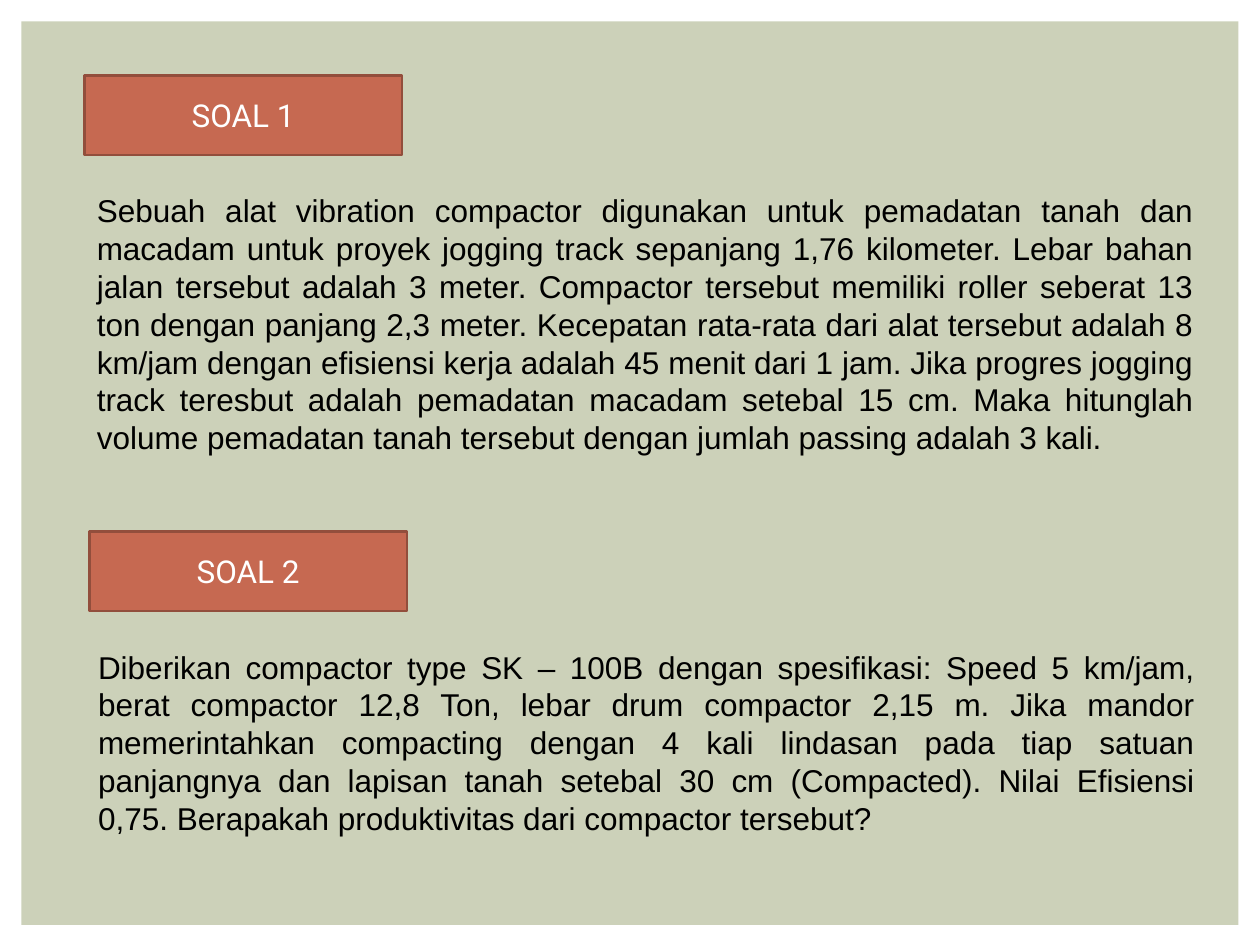
"""Build a slide with two compactor exercises, each under a label box."""
from dataclasses import dataclass

from pptx import Presentation
from pptx.dml.color import RGBColor
from pptx.enum import shapes, text
from pptx.util import Inches, Pt

WHITE = RGBColor(0xFF, 0xFF, 0xFF)
BLACK = RGBColor(0x00, 0x00, 0x00)
SAGE = RGBColor(0xCC, 0xD1, 0xB9)
TERRACOTTA = RGBColor(0xC6, 0x69, 0x51)
BROWN = RGBColor(0x92, 0x4E, 0x3C)

BLANK_LAYOUT = 6
MARGIN = 0.17
LABEL_WIDTH, LABEL_HEIGHT = 2.52, 0.63
QUESTION_WIDTH = 8.9


@dataclass
class Exercise:
    label: str
    label_left: float
    label_top: float
    question: str
    question_left: float
    question_top: float
    question_height: float


EXERCISES = [
    Exercise(
        "SOAL 1", 0.67, 0.6,
        "Sebuah alat vibration compactor digunakan untuk pemadatan tanah dan "
        "macadam untuk proyek jogging track sepanjang 1,76 kilometer. Lebar bahan "
        "jalan tersebut adalah 3 meter. Compactor tersebut memiliki roller seberat "
        "13 ton dengan panjang 2,3 meter. Kecepatan rata-rata dari alat tersebut "
        "adalah 8 km/jam dengan efisiensi kerja adalah 45 menit dari 1 jam. Jika "
        "progres jogging track teresbut adalah pemadatan macadam setebal 15 cm. "
        "Maka hitunglah volume pemadatan tanah tersebut dengan jumlah passing "
        "adalah 3 kali.",
        0.67, 1.47, 2.22),
    Exercise(
        "SOAL 2", 0.71, 4.22,
        "Diberikan compactor type SK – 100B dengan spesifikasi: Speed 5 km/jam, "
        "berat compactor 12,8 Ton, lebar drum compactor 2,15 m. Jika mandor "
        "memerintahkan compacting dengan 4 kali lindasan pada tiap satuan "
        "panjangnya dan lapisan tanah setebal 30 cm (Compacted). Nilai Efisiensi "
        "0,75. Berapakah produktivitas dari compactor tersebut?",
        0.68, 5.09, 1.62),
]


def add_rectangle(slide, left: float, top: float, width: float, height: float,
                  fill: RGBColor):
    """Add a filled rectangle without shadow or outline."""
    shape = slide.shapes.add_shape(
        shapes.MSO_SHAPE.RECTANGLE,
        Inches(left), Inches(top), Inches(width), Inches(height))
    shape.shadow.inherit = False
    shape.fill.solid()
    shape.fill.fore_color.rgb = fill
    shape.line.fill.background()
    return shape


def write(shape, content: str, font: str, color: RGBColor,
          alignment: text.PP_ALIGN) -> None:
    """Write one run of 18 pt text into the shape."""
    shape.text_frame.word_wrap = True
    paragraph = shape.text_frame.paragraphs[0]
    paragraph.alignment = alignment
    run = paragraph.add_run()
    run.text = content
    run.font.name = font
    run.font.size = Pt(18)
    run.font.color.rgb = color


def add_exercise(slide, exercise: Exercise) -> None:
    """Add the label box and the question below it."""
    label = add_rectangle(slide, exercise.label_left, exercise.label_top,
                          LABEL_WIDTH, LABEL_HEIGHT, TERRACOTTA)
    label.line.color.rgb = BROWN
    label.line.width = Pt(1.5)
    label.text_frame.vertical_anchor = text.MSO_ANCHOR.MIDDLE
    write(label, exercise.label, "Roboto", WHITE, text.PP_ALIGN.CENTER)

    question = slide.shapes.add_textbox(
        Inches(exercise.question_left), Inches(exercise.question_top),
        Inches(QUESTION_WIDTH), Inches(exercise.question_height))
    question.text_frame.auto_size = text.MSO_AUTO_SIZE.SHAPE_TO_FIT_TEXT
    write(question, exercise.question, "Arial", BLACK, text.PP_ALIGN.JUSTIFY)


def main() -> None:
    """Draw the panel and the exercises, then save the presentation."""
    presentation = Presentation()
    presentation.slide_width = Inches(10)
    presentation.slide_height = Inches(7.5)
    slide = presentation.slides.add_slide(presentation.slide_layouts[BLANK_LAYOUT])
    slide.background.fill.solid()
    slide.background.fill.fore_color.rgb = WHITE
    add_rectangle(slide, MARGIN, MARGIN, 10 - 2 * MARGIN, 7.17, SAGE)
    for exercise in EXERCISES:
        add_exercise(slide, exercise)
    presentation.save("out.pptx")


if __name__ == "__main__":
    main()
